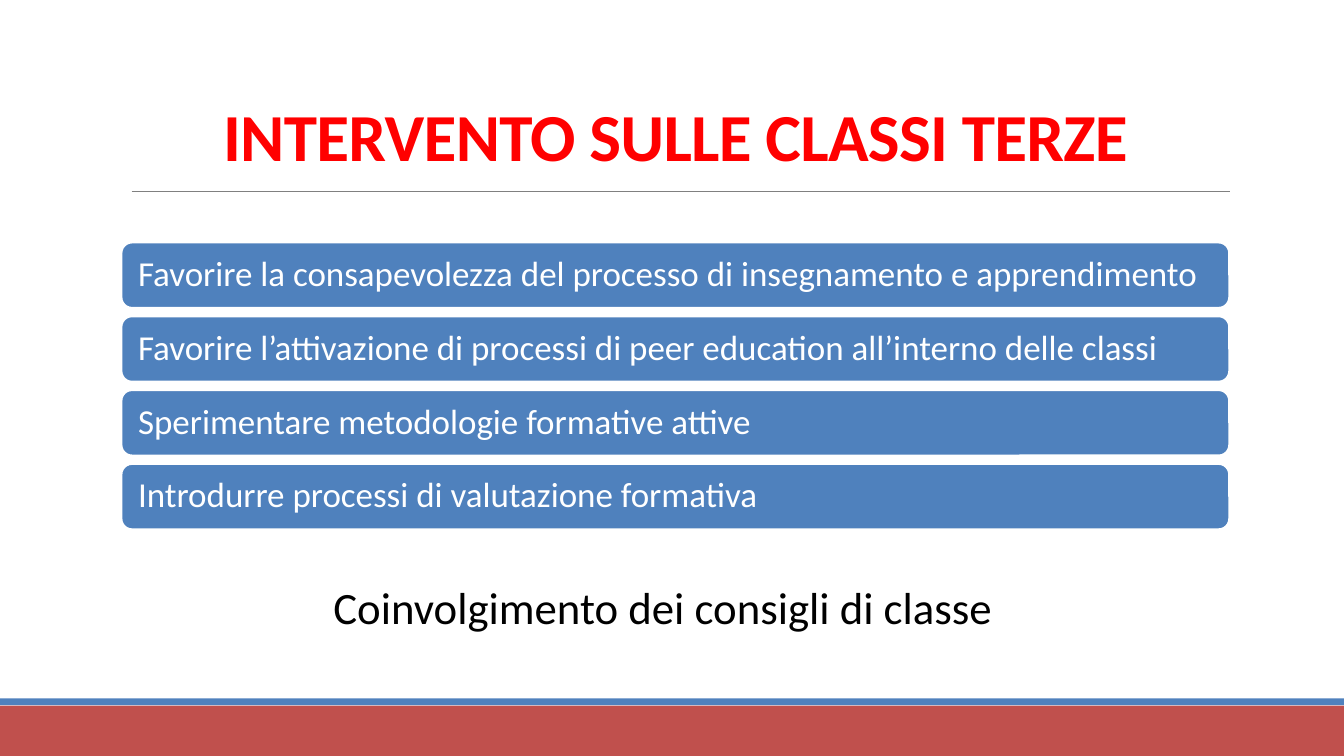
from lxml import etree
from pptx import Presentation
from pptx.dml.color import RGBColor
from pptx.enum.shapes import MSO_CONNECTOR, MSO_SHAPE
from pptx.enum.text import MSO_ANCHOR, PP_ALIGN
from pptx.oxml.ns import qn
from pptx.util import Cm, Pt

RED, BLUE, WHITE = "C0504D", "4F81BD", "FFFFFF"
WIDTH, HEIGHT = 33.87, 19.05
LEFT, BODY_WIDTH = 3.05, 27.94
GOALS = [
    "Favorire la consapevolezza del processo di insegnamento e apprendimento",
    "Favorire l’attivazione di processi di peer education all’interno delle classi",
    "Sperimentare metodologie formative attive",
    "Introdurre processi di valutazione formativa",
]
GOAL_TOP, GOAL_HEIGHT, GOAL_PITCH = 6.1, 1.67, 1.86


def rgb(color):
    return RGBColor.from_string(color)


def set_insets(tf, left, top, right, bottom):
    tf.margin_left, tf.margin_top = Cm(left), Cm(top)
    tf.margin_right, tf.margin_bottom = Cm(right), Cm(bottom)


def write(tf, text, size, color, bold=False):
    tf.word_wrap = True
    p = tf.paragraphs[0]
    p.text = text
    font = p.runs[0].font
    font.name, font.size, font.bold = "Calibri", Pt(size), bold
    font.color.rgb = rgb(color)
    return p


def add_box(s, kind, x, y, w, h, fill):
    sp = s.shapes.add_shape(kind, Cm(x), Cm(y), Cm(w), Cm(h))
    sp.shadow.inherit = False
    sp.fill.solid()
    sp.fill.fore_color.rgb = rgb(fill)
    sp.line.fill.background()
    return sp


def add_rule(s, x1, x2, y):
    line = s.shapes.add_connector(MSO_CONNECTOR.STRAIGHT, Cm(x1), Cm(y), Cm(x2), Cm(y))
    line.line.color.rgb = rgb("808080")
    line.line.width = Pt(0.5)
    etree.SubElement(line._element.spPr, qn("a:effectLst"))


def add_title(s, text):
    sp = s.shapes.add_textbox(Cm(LEFT), Cm(0.48), Cm(BODY_WIDTH), Cm(4.04))
    tf = sp.text_frame
    tf.vertical_anchor = MSO_ANCHOR.BOTTOM
    set_insets(tf, 0, 0, 0, 0.1)
    p = write(tf, text, 48, "FF0000", bold=True)
    p.alignment = PP_ALIGN.CENTER
    p.runs[0].font._element.set("spc", "-50")


def add_goal(s, y, text):
    sp = add_box(s, MSO_SHAPE.ROUNDED_RECTANGLE, LEFT, y, BODY_WIDTH, GOAL_HEIGHT, BLUE)
    sp.line.color.rgb = rgb(WHITE)
    sp.line.width = Pt(2)
    tf = sp.text_frame
    tf.vertical_anchor = MSO_ANCHOR.MIDDLE
    set_insets(tf, 0.35, 0.35, 0.25, 0.35)
    p = write(tf, text, 25, WHITE)
    p.alignment = PP_ALIGN.LEFT
    p.line_spacing = 0.9
    p.space_after = Pt(8.8)


def add_caption(s, text):
    sp = s.shapes.add_textbox(Cm(8.15), Cm(14.48), Cm(17.6), Cm(1.6))
    write(sp.text_frame, text, 32, "000000")


def main():
    prs = Presentation()
    prs.slide_width, prs.slide_height = Cm(WIDTH), Cm(HEIGHT)
    s = prs.slides.add_slide(prs.slide_layouts[6])

    # Footer bands and title rule
    add_box(s, MSO_SHAPE.RECTANGLE, 0, 17.78, WIDTH, 1.27, RED)
    add_box(s, MSO_SHAPE.RECTANGLE, 0, 17.6, WIDTH, 0.17, BLUE)
    add_rule(s, 3.32, 31, 4.82)

    # Title, list of goals and closing line
    add_title(s, "INTERVENTO SULLE CLASSI TERZE")
    for i, goal in enumerate(GOALS):
        add_goal(s, GOAL_TOP + i * GOAL_PITCH, goal)
    add_caption(s, "Coinvolgimento dei consigli di classe")

    prs.save("out.pptx")


if __name__ == "__main__":
    main()
